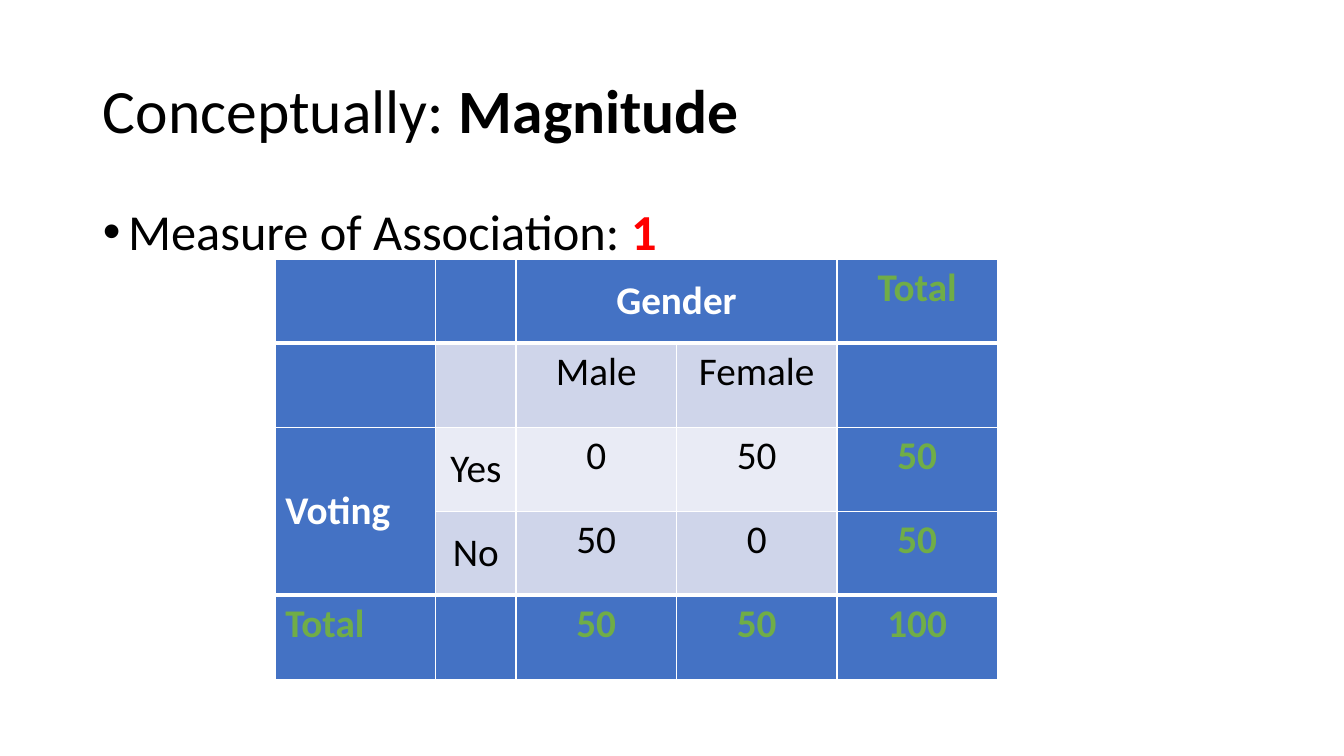
from lxml.etree import SubElement
from pptx import Presentation
from pptx.dml.color import RGBColor
from pptx.enum.text import MSO_ANCHOR, PP_ALIGN
from pptx.oxml.ns import qn
from pptx.util import Inches, Pt

HEX = {"white": "FFFFFF", "black": "000000", "red": "FF0000", "green": "70AD47",
       "blue": "4472C4", "band": "CFD5EA", "pale": "E9EBF5"}
TITLE = [("Conceptually: ", {}), ("Magnitude", {"bold": True})]
POINT = [("Measure of Association: ", {}), ("1", {"bold": True, "color": "red"})]
ROWS = [
    ["", "", "Gender", "", "Total"],
    ["", "", "Male", "Female", ""],
    ["Voting", "Yes", "0", "50", "50"],
    ["", "No", "50", "0", "50"],
    ["Total", "", "50", "50", "100"],
]
HEADS = ("Gender", "Voting")
MIDDLE = HEADS + ("Yes", "No")
MERGES = [((0, 2), (0, 3)), ((2, 0), (3, 0))]
UNIT, ROW = 0.796, 0.834
SPANS = [2, 1, 2, 2, 2]


def write(frame, runs, size, align=PP_ALIGN.LEFT, space=None, before=0):
    """Fill the first paragraph with (text, format) runs."""
    para = frame.paragraphs[0]
    para.alignment = align
    para.space_before = Pt(before)
    if space:
        para.line_spacing = space
    for text, style in runs:
        run = para.add_run()
        run.text = text
        font = run.font
        font.name, font.size = "Calibri", Pt(size)
        font.bold = style.get("bold", False)
        font.color.rgb = RGBColor.from_string(HEX[style.get("color", "black")])
    return para


def place(shape, left, top, width, height):
    shape.left, shape.top = Inches(left), Inches(top)
    shape.width, shape.height = Inches(width), Inches(height)


def edge(cell, side, width):
    line = SubElement(cell._tc.get_or_add_tcPr(), qn("a:ln" + side), w=str(Pt(width)))
    fill = SubElement(line, qn("a:solidFill"))
    SubElement(fill, qn("a:srgbClr"), val=HEX["white"])


def paint(cell, row, col):
    """Set the borders and fill that follow from the cell's place."""
    last = len(ROWS) - 1
    thick = {"T": row in (1, last), "B": row in (0, last - 1)}
    for side in "LRTB":
        edge(cell, side, 3 if thick.get(side) else 1)
    rim = row in (0, last) or col in (0, len(SPANS) - 1)
    shade = "blue" if rim else "band" if row % 2 else "pale"
    cell.fill.solid()
    cell.fill.fore_color.rgb = RGBColor.from_string(HEX[shade])
    return rim


def main():
    deck = Presentation()
    deck.slide_width, deck.slide_height = Inches(13.33), Inches(7.5)
    slide = deck.slides.add_slide(deck.slide_layouts[1])

    title, body = slide.placeholders
    place(title, 0.92, 0.4, 11.5, 1.45)
    title.text_frame.vertical_anchor = MSO_ANCHOR.MIDDLE
    write(title.text_frame, TITLE, 44, space=0.9)

    place(body, 0.92, 2, 11.5, 4.76)
    props = write(body.text_frame, POINT, 36, space=0.9, before=10)._p.get_or_add_pPr()
    props.set("marL", str(Inches(0.25)))
    props.set("indent", str(Inches(-0.25)))
    SubElement(props, qn("a:buFont"), typeface="Arial")
    SubElement(props, qn("a:buChar"), char="•")

    table = slide.shapes.add_table(
        len(ROWS), len(SPANS), Inches(2.73), Inches(2.57),
        Inches(UNIT * sum(SPANS)), Inches(ROW * len(ROWS))).table
    for col, span in zip(table.columns, SPANS):
        col.width = Inches(UNIT * span)
    for row in table.rows:
        row.height = Inches(ROW)
    for start, end in MERGES:
        table.cell(*start).merge(table.cell(*end))

    for r, row in enumerate(ROWS):
        for c, text in enumerate(row):
            cell = table.cell(r, c)
            rim = paint(cell, r, c)
            if not text:
                continue
            color = "white" if text in HEADS else "green" if rim else "black"
            if text in MIDDLE:
                cell.vertical_anchor = MSO_ANCHOR.MIDDLE
            write(cell.text_frame, [(text, {"bold": rim, "color": color})], 28,
                  align=PP_ALIGN.CENTER if c else PP_ALIGN.LEFT)

    deck.save("out.pptx")


if __name__ == "__main__":
    main()
